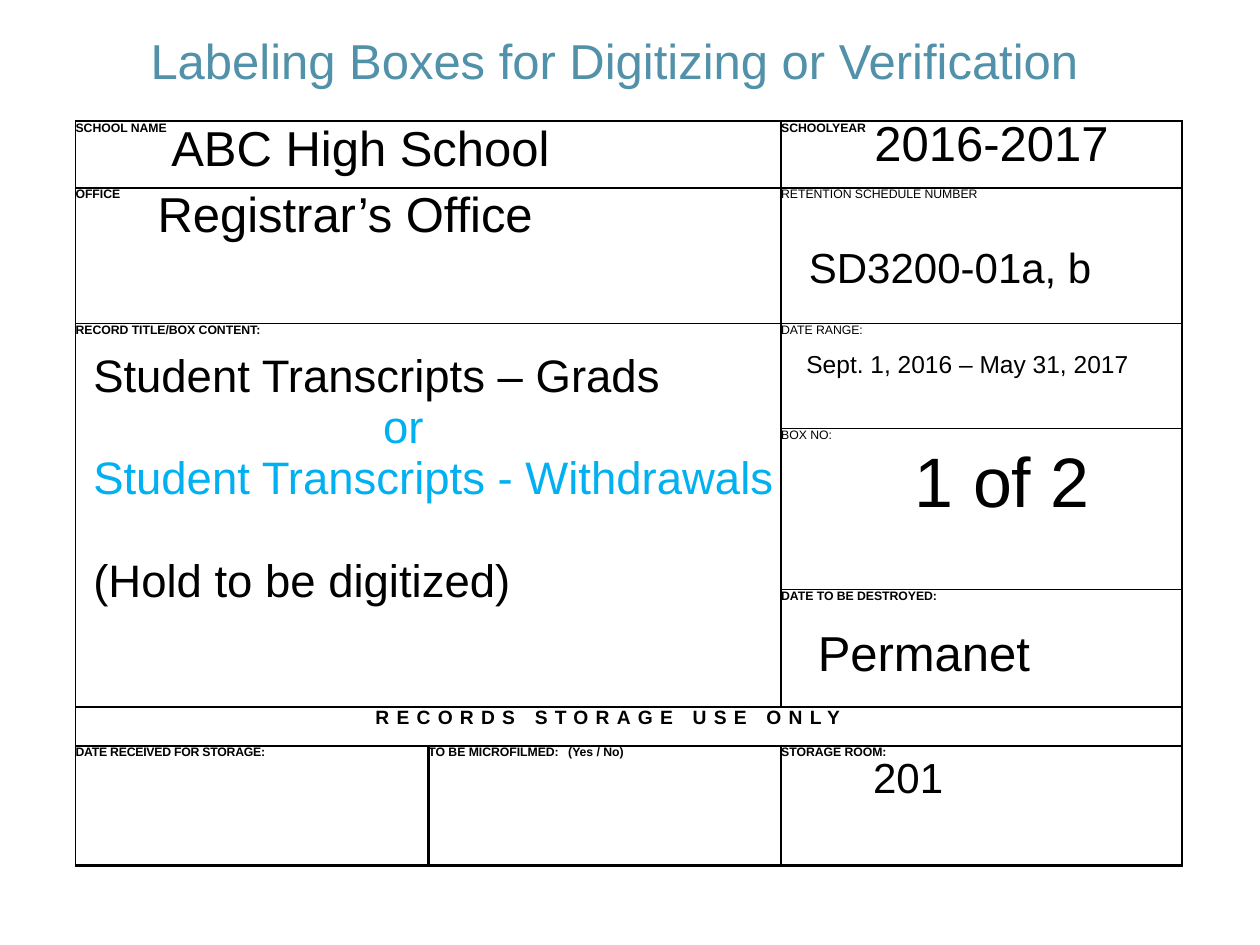
"""Build a slide showing how to fill in a storage box label."""
import lxml.etree
import pptx
import pptx.dml.color
import pptx.enum.text
import pptx.oxml.ns
import pptx.util

FONT = "Arial"
BLACK, BLUE, TEAL = "000000", "00B0F0", "5191A9"
THIN, THICK = 0.75, 1.5
LEFT, TOP = 0.6, 0.96
COLS = [2.8, 2.8, 3.18]
ROWS = [0.53, 1.08, 0.83, 1.28, 0.93, 0.31, 0.95]
EDGES = [THIN, THICK, THIN, THIN, THIN, THICK, THICK, THICK]
SIDES = [THIN, THICK, THICK, THICK]
TITLE = "Labeling Boxes for Digitizing or Verification"


def label(text, **more):
    """Describe a small field name."""
    return dict(text=text, size=7, **{"bold": True, **more})


def entry(text, size, indent, **more):
    """Describe a filled-in value."""
    return dict(text=text, size=size, indent=indent, **more)


CELLS = [
    (0, 0, 1, 2, [label("SCHOOL NAME"), entry("ABC High School", 28, 0.76, line=24.3)]),
    (0, 2, 1, 1, [label("SCHOOLYEAR"), entry("2016-2017", 28, 0.74, line=21.1)]),
    (1, 0, 1, 2, [label("OFFICE"), entry("Registrar’s Office", 28, 0.65, line=23.9)]),
    (1, 2, 1, 1, [label("RETENTION SCHEDULE NUMBER", bold=False),
                  entry("SD3200-01a, b", 24, 0.22, line=17.3, before=34.6)]),
    (2, 0, 3, 2, [label("RECORD TITLE/BOX CONTENT:"),
                  entry("Student Transcripts – Grads", 26, 0.14, before=8),
                  entry("or", 26, 2.44, color=BLUE),
                  entry("Student Transcripts - Withdrawals", 26, 0.14, color=BLUE),
                  entry("(Hold to be digitized)", 26, 0.14, before=29.9)]),
    (2, 2, 1, 1, [label("DATE RANGE:", bold=False),
                  entry("Sept. 1, 2016 – May 31, 2017", 14, 0.2, before=8)]),
    (3, 2, 1, 1, [label("BOX NO:", bold=False), entry("1 of 2", 40, 1.06, line=45.9)]),
    (4, 2, 1, 1, [label("DATE TO BE DESTROYED:"), entry("Permanet", 28, 0.29, before=13.8)]),
    (5, 0, 1, 3, [entry("RECORDS STORAGE USE ONLY", 11, 2.38, bold=True, track=4.1)]),
    (6, 0, 1, 1, [label("DATE RECEIVED FOR STORAGE:", track=-0.1)]),
    (6, 1, 1, 1, [label("TO BE MICROFILMED:\t(Yes / No)", tab=1.11)]),
    (6, 2, 1, 1, [label("STORAGE ROOM:"), entry("201", 24, 0.73, line=24.3)]),
]


def tint(code):
    """Turn a hex string into a colour."""
    return pptx.dml.color.RGBColor.from_string(code)


def child(node, tag, **attrs):
    """Add a drawing element below a node."""
    made = lxml.etree.SubElement(node, pptx.oxml.ns.qn(tag))
    for name, value in attrs.items():
        made.set(name, str(value))
    return made


def write(para, text, size, bold=False, color=BLACK, indent=0, line=None,
          before=0, track=0, tab=None):
    """Fill one paragraph."""
    run = para.add_run()
    run.text = text
    props = para._p.get_or_add_pPr()
    if tab:
        child(child(props, "a:tabLst"), "a:tab", pos=pptx.util.Inches(tab), algn="l")
    if indent:
        props.set("marL", str(pptx.util.Inches(indent)))
        props.set("indent", "0")
    if line:
        para.line_spacing = pptx.util.Pt(line)
    if before:
        para.space_before = pptx.util.Pt(before)
    if track:
        run._r.get_or_add_rPr().set("spc", str(round(track * 100)))
    font = para.font
    font.name, font.size, font.bold = FONT, pptx.util.Pt(size), bold
    font.color.rgb = tint(color)


def frame(cell, widths):
    """Draw the four borders of a cell and clear its fill."""
    props = cell._tc.get_or_add_tcPr()
    for side, width in zip("LRTB", widths):
        edge = child(props, f"a:ln{side}", w=pptx.util.Pt(width))
        child(child(edge, "a:solidFill"), "a:srgbClr", val=BLACK)
    cell.fill.background()


def draw_title(slide):
    """Add the heading."""
    box = slide.shapes.add_textbox(*map(pptx.util.Inches, (0.94, 0.19, 7.87, 0.57)))
    box.text_frame.word_wrap = True
    para = box.text_frame.paragraphs[0]
    write(para, TITLE, 28, color=TEAL)
    para.alignment = pptx.enum.text.PP_ALIGN.CENTER


def draw_form(slide):
    """Add the label form as a table."""
    area = map(pptx.util.Inches, (LEFT, TOP, sum(COLS), sum(ROWS)))
    table = slide.shapes.add_table(len(ROWS), len(COLS), *area).table
    table.first_row = table.horz_banding = False
    for col, width in zip(table.columns, COLS):
        col.width = pptx.util.Inches(width)
    for row, height in zip(table.rows, ROWS):
        row.height = pptx.util.Inches(height)
    for top, left, high, wide, lines in CELLS:
        end, right = top + high, left + wide
        widths = SIDES[left], SIDES[right], EDGES[top], EDGES[end]
        for row in range(top, end):
            for col in range(left, right):
                frame(table.cell(row, col), widths)
        cell = table.cell(top, left)
        if high * wide > 1:
            cell.merge(table.cell(end - 1, right - 1))
        cell.margin_left = cell.margin_right = cell.margin_top = cell.margin_bottom = 0
        text = cell.text_frame
        for place, line in enumerate(lines):
            write(text.add_paragraph() if place else text.paragraphs[0], **line)


def main():
    """Make and save the slide."""
    deck = pptx.Presentation()
    deck.slide_width, deck.slide_height = pptx.util.Inches(10), pptx.util.Inches(7.5)
    slide = deck.slides.add_slide(deck.slide_layouts[6])
    draw_form(slide)
    draw_title(slide)
    deck.save("out.pptx")


if __name__ == "__main__":
    main()
